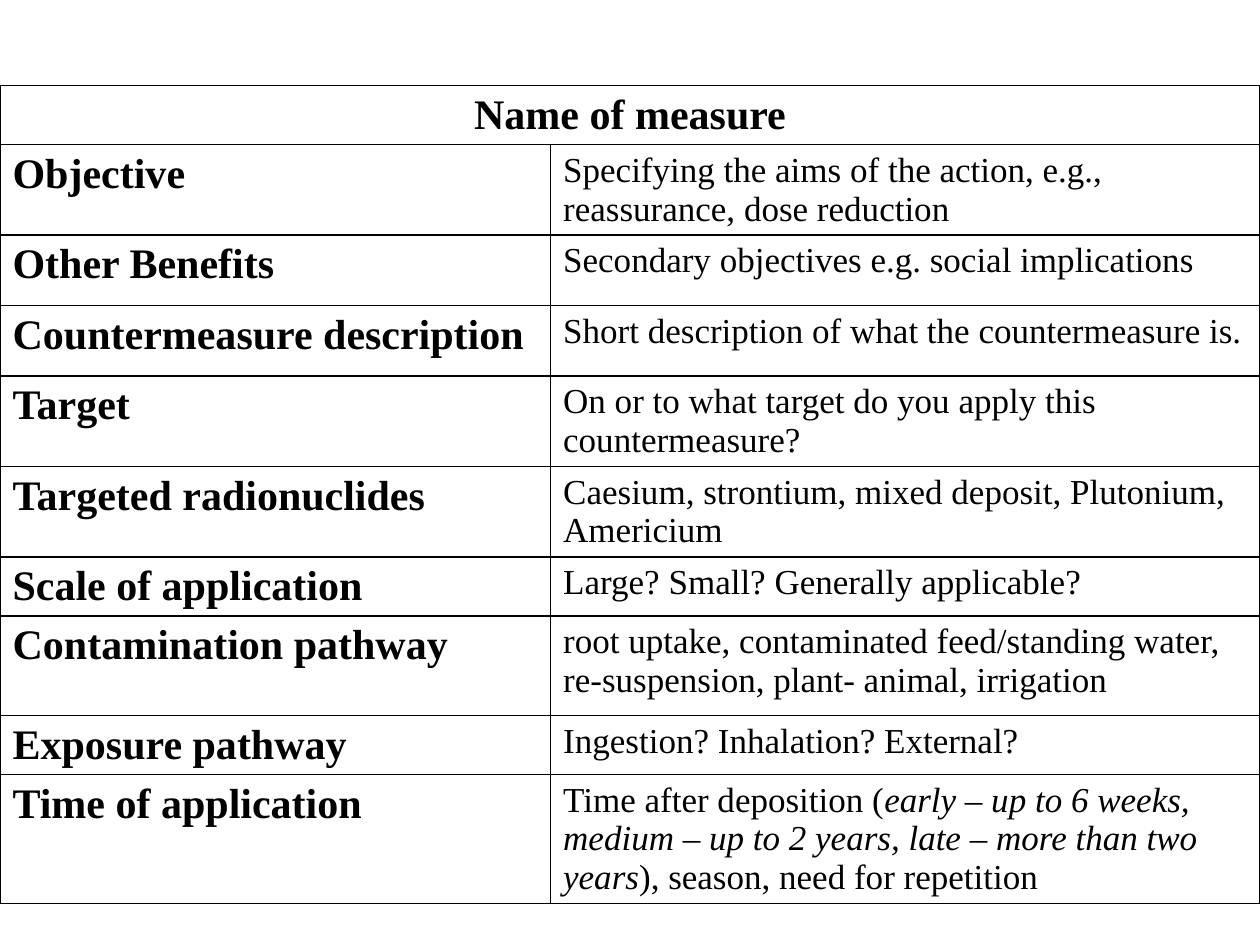
"""Build a slide with a template table for describing a countermeasure."""
from lxml import etree
from pptx import Presentation
from pptx import util as u
from pptx.dml.color import RGBColor
from pptx.enum import text
from pptx.oxml.ns import qn

FONT = "Times New Roman"
BLACK = "000000"
WHITE = "FFFFFF"
TITLE = "Name of measure"
TITLE_HEIGHT = 0.35
COLUMN_WIDTHS = (4.37, 5.63)
MEASURE_ROWS = [
    (0.58, "Objective", ["Specifying the aims of the action, e.g., reassurance, dose reduction"]),
    (0.56, "Other Benefits", ["Secondary objectives e.g. social implications"]),
    (0.56, "Countermeasure description", ["Short description of what the countermeasure is."]),
    (0.58, "Target", ["On or to what target do you apply this countermeasure?"]),
    (0.58, "Targeted radionuclides", ["Caesium, strontium, mixed deposit, Plutonium, Americium"]),
    (0.35, "Scale of application", ["Large? Small? Generally applicable?"]),
    (0.79, "Contamination pathway", [
        "root uptake, contaminated feed/standing water, re-suspension, plant- animal, irrigation"]),
    (0.35, "Exposure pathway", ["Ingestion? Inhalation? External?"]),
    (0.81, "Time of application", [
        "Time after deposition (",
        "early – up to 6 weeks, medium – up to 2 years, late – more than two years",
        "), season, need for repetition"]),
]


def color(value):
    """Turn a hex string into a colour."""
    return RGBColor.from_string(value)


def style_cell(cell):
    """Give a cell thin black borders and a white fill."""
    properties = cell._tc.get_or_add_tcPr()
    for side in ("a:lnL", "a:lnR", "a:lnT", "a:lnB"):
        line = etree.SubElement(properties, qn(side), w=str(u.Pt(1)))
        fill = etree.SubElement(line, qn("a:solidFill"))
        etree.SubElement(fill, qn("a:srgbClr"), val=BLACK)
    cell.fill.solid()
    cell.fill.fore_color.rgb = color(WHITE)


def write_cell(cell, pieces, size, bold):
    """Write the pieces as runs, every second one in italics."""
    para = cell.text_frame.paragraphs[0]
    for index, piece in enumerate(pieces):
        span = para.add_run()
        span.text = piece
        span.font.name = FONT
        span.font.size = u.Pt(size)
        span.font.bold = bold
        span.font.italic = index % 2 == 1
        span.font.color.rgb = color(BLACK)
    return para


def add_measure_table(page):
    """Add the table with its title row and one row per property."""
    heights = [TITLE_HEIGHT] + [row[0] for row in MEASURE_ROWS]
    frame = page.shapes.add_table(
        len(heights), len(COLUMN_WIDTHS), u.Inches(0), u.Inches(0.68),
        u.Inches(sum(COLUMN_WIDTHS)), u.Inches(sum(heights)))
    table = frame.table
    for column, width in zip(table.columns, COLUMN_WIDTHS):
        column.width = u.Inches(width)
    for row, height in zip(table.rows, heights):
        row.height = u.Inches(height)
    for cell in table.iter_cells():
        style_cell(cell)
    title = table.cell(0, 0)
    title.merge(table.cell(0, 1))
    write_cell(title, [TITLE], 24, True).alignment = text.PP_ALIGN.CENTER
    for index, (_, label, pieces) in enumerate(MEASURE_ROWS, start=1):
        write_cell(table.cell(index, 0), [label], 24, True)
        write_cell(table.cell(index, 1), pieces, 20, False)


def main():
    """Create the deck and save it."""
    deck = Presentation()
    deck.slide_width = u.Inches(10)
    deck.slide_height = u.Inches(7.5)
    page = deck.slides.add_slide(deck.slide_layouts[6])
    add_measure_table(page)
    deck.save("out.pptx")


if __name__ == "__main__":
    main()
